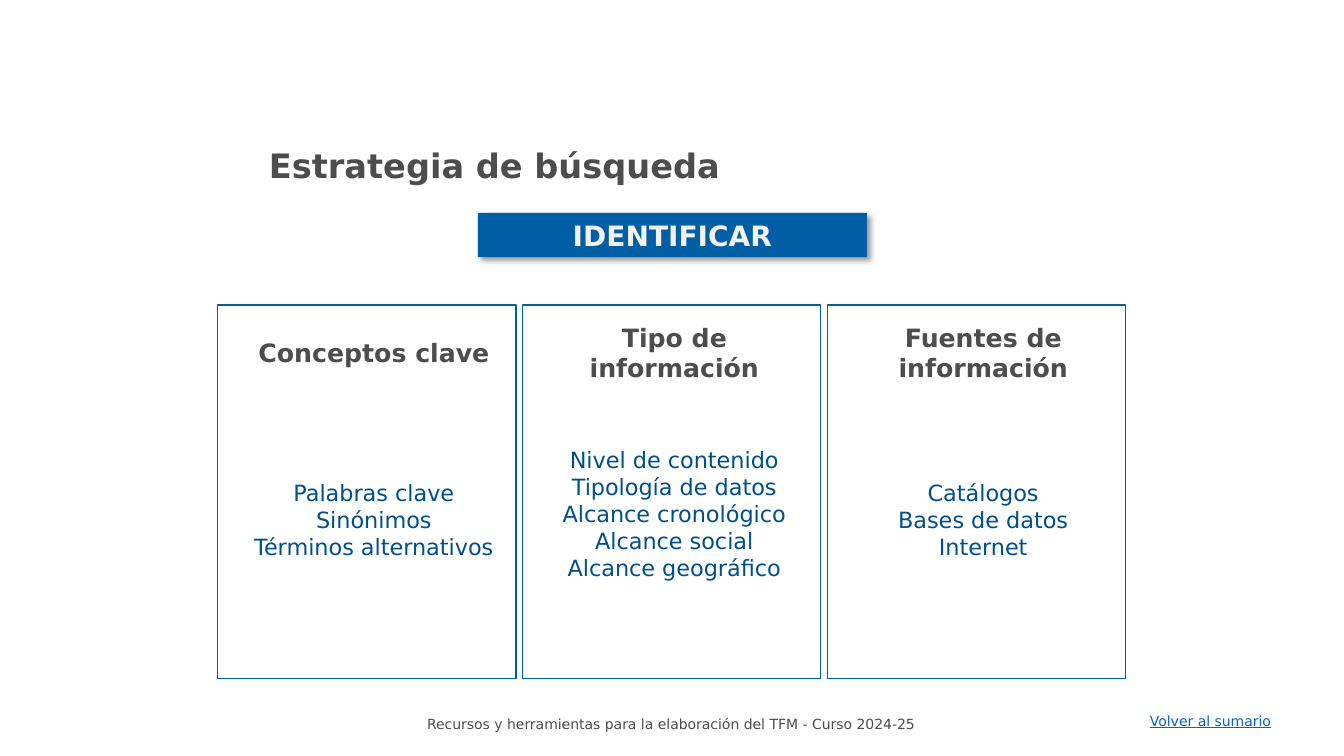
"""Build the search strategy slide with three outlined columns."""
from dataclasses import dataclass

from lxml.etree import SubElement
from pptx import Presentation
from pptx.dml.color import RGBColor
from pptx.enum.shapes import MSO_SHAPE
from pptx.enum.text import MSO_ANCHOR, PP_ALIGN
from pptx.oxml.ns import qn
from pptx.shapes.autoshape import Shape
from pptx.slide import Slide
from pptx.util import Pt

FONT = "DejaVu Sans"
GRAY = RGBColor(0x4D, 0x4D, 0x4D)
BLUE = RGBColor(0x00, 0x5E, 0xA4)
NAVY = RGBColor(0x00, 0x4F, 0x8A)
LINK = RGBColor(0x05, 0x63, 0xC1)
PALE = RGBColor(0xF2, 0xF2, 0xF2)

CARD_LEFT, CARD_TOP, CARD_PITCH = 155.5, 218, 217.8
CARD_WIDTH, CARD_HEIGHT = 213, 266.5


@dataclass(frozen=True)
class Box:
    left: float
    top: float
    width: float
    height: float


@dataclass(frozen=True)
class Column:
    heading: str
    heading_box: Box
    items: tuple[str, ...]
    items_box: Box


COLUMNS = (
    Column("Conceptos clave", Box(170.6, 237.6, 193, 28.8),
           ("Palabras clave", "Sinónimos", "Términos alternativos"),
           Box(170.6, 339, 193, 65.5)),
    Column("Tipo de información", Box(377.3, 226.8, 208.8, 51),
           ("Nivel de contenido", "Tipología de datos", "Alcance cronológico",
            "Alcance social", "Alcance geográfico"),
           Box(377.3, 315.4, 208.8, 106.6)),
    Column("Fuentes de información", Box(597.6, 226.8, 209.5, 51),
           ("Catálogos", "Bases de datos", "Internet"),
           Box(604.8, 339, 195, 67.7)),
)


def write(sp: Shape, *lines: str, size: float, color: RGBColor,
          bold: bool = False, underline: bool = False, wrap: bool = True,
          align: PP_ALIGN = PP_ALIGN.CENTER,
          anchor: MSO_ANCHOR = MSO_ANCHOR.TOP) -> None:
    """Fill a shape with one formatted paragraph per line."""
    tf = sp.text_frame
    tf.word_wrap = wrap
    tf.vertical_anchor = anchor
    for i, line in enumerate(lines):
        p = tf.add_paragraph() if i else tf.paragraphs[0]
        p.alignment = align
        r = p.add_run()
        r.text = line
        r.font.name = FONT
        r.font.size = Pt(size)
        r.font.bold = bold
        r.font.underline = underline
        r.font.color.rgb = color


def add_text(s: Slide, box: Box) -> Shape:
    """Add an empty text box."""
    return s.shapes.add_textbox(Pt(box.left), Pt(box.top),
                                Pt(box.width), Pt(box.height))


def add_rect(s: Slide, box: Box) -> Shape:
    """Add a rectangle without a shadow."""
    sp = s.shapes.add_shape(MSO_SHAPE.RECTANGLE, Pt(box.left), Pt(box.top),
                            Pt(box.width), Pt(box.height))
    sp.shadow.inherit = False
    return sp


def cast_shadow(sp: Shape) -> None:
    """Give a shape a soft shadow towards the lower right."""
    effects = sp.element.spPr.find(qn("a:effectLst"))
    shadow = SubElement(effects, qn("a:outerShdw"), blurRad=str(Pt(4)),
                        dist=str(Pt(3)), dir="2700000", algn="tl",
                        rotWithShape="0")
    color = SubElement(shadow, qn("a:srgbClr"), val="000000")
    SubElement(color, qn("a:alpha"), val="40000")


def add_column(s: Slide, index: int, column: Column) -> None:
    """Draw the heading, the items and the outline of a column."""
    write(add_text(s, column.heading_box), column.heading,
          size=18, color=GRAY, bold=True)
    write(add_text(s, column.items_box), *column.items, size=16, color=NAVY)
    card = add_rect(s, Box(CARD_LEFT + index * CARD_PITCH, CARD_TOP,
                           CARD_WIDTH, CARD_HEIGHT))
    card.fill.background()
    card.line.color.rgb = BLUE
    card.line.width = Pt(1)


def main() -> None:
    """Build and save the presentation."""
    prs = Presentation()
    prs.slide_width, prs.slide_height = Pt(960), Pt(540)
    s = prs.slides.add_slide(prs.slide_layouts[6])

    write(add_text(s, Box(193, 507.6, 572.4, 19.4)),
          "Recursos y herramientas para la elaboración del TFM - Curso 2024-25",
          size=10, color=GRAY, anchor=MSO_ANCHOR.MIDDLE)
    write(add_text(s, Box(814.3, 505.4, 103.7, 19.4)), "Volver al sumario",
          size=10, color=LINK, underline=True, wrap=False, align=PP_ALIGN.LEFT)
    write(add_text(s, Box(185, 100, 601.2, 36)), "Estrategia de búsqueda",
          size=24, color=GRAY, bold=True, align=PP_ALIGN.LEFT)

    banner = add_rect(s, Box(341.3, 152, 278, 31.7))
    banner.fill.solid()
    banner.fill.fore_color.rgb = BLUE
    banner.line.fill.background()
    cast_shadow(banner)
    write(banner, "IDENTIFICAR", size=20, color=PALE, bold=True,
          anchor=MSO_ANCHOR.MIDDLE)

    for index, column in enumerate(COLUMNS):
        add_column(s, index, column)

    prs.save("out.pptx")


if __name__ == "__main__":
    main()
